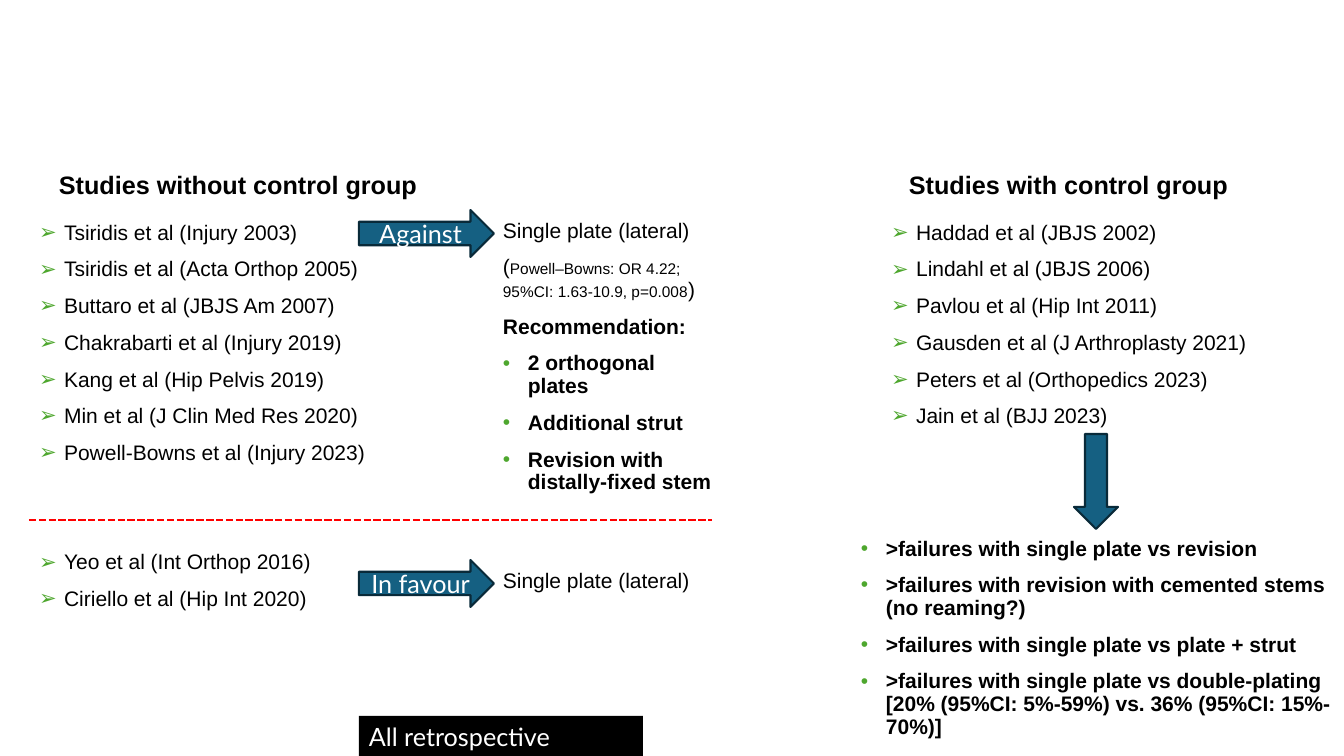
from lxml import etree
from pptx import Presentation
from pptx import util as u
from pptx.dml.color import RGBColor
from pptx.enum import dml, shapes, text
from pptx.oxml import ns

PX = 914400 / 100.8
INDENT = 25
BLACK, WHITE, RED, GREEN = "000000", "FFFFFF", "FF0000", "4EA72E"
BLUE, NAVY = "156082", "092A39"
ARROW, DOT = "➢", "•"
RIGHT, DOWN = shapes.MSO_SHAPE.RIGHT_ARROW, shapes.MSO_SHAPE.DOWN_ARROW


def px(*lengths):
    return [u.Emu(round(n * PX)) for n in lengths]


def color(value):
    return RGBColor.from_string(value)


def add_run(p, words, size=15, bold=False, font="Arial", ink=BLACK):
    r = p.add_run()
    r.text = words
    r.font.size = u.Pt(size)
    r.font.bold = bold
    r.font.name = font
    r.font.color.rgb = color(ink)


def add_bullet(p, char):
    pPr = p._p.get_or_add_pPr()
    pPr.set("marL", str(px(INDENT)[0]))
    pPr.set("indent", str(px(-INDENT)[0]))
    clr = etree.SubElement(pPr, ns.qn("a:buClr"))
    etree.SubElement(clr, ns.qn("a:srgbClr"), val=GREEN)
    etree.SubElement(pPr, ns.qn("a:buFont"), typeface="Arial")
    etree.SubElement(pPr, ns.qn("a:buChar"), char=char)


def next_paragraph(tf, before=10):
    """Return the unused first paragraph, or a new one spaced from the last."""
    p = tf.paragraphs[0]
    first = not p.runs
    if not first:
        p = tf.add_paragraph()
    p.line_spacing = 0.9
    p.space_before = u.Pt(0 if first else before)
    return p


def add_items(tf, items, char, bold=False, before=10):
    """Add bulleted items; `before` is the space above the first of them."""
    for i, item in enumerate(items):
        p = next_paragraph(tf, 10 if i else before)
        add_bullet(p, char)
        add_run(p, item, bold=bold)


def add_text_box(s, x, y, w, h, wrap=True):
    tf = s.shapes.add_textbox(*px(x, y, w, h)).text_frame
    tf.word_wrap = wrap
    return tf


def add_heading(s, x, y, w, words):
    tf = add_text_box(s, x, y, w, 40, wrap=False)
    tf.auto_size = text.MSO_AUTO_SIZE.SHAPE_TO_FIT_TEXT
    add_run(tf.paragraphs[0], words, 18, True)


def place_list(holder, x, y, w, h, items):
    holder.left, holder.top, holder.width, holder.height = px(x, y, w, h)
    tf = holder.text_frame
    tf.auto_size = text.MSO_AUTO_SIZE.NONE
    add_items(tf, items, ARROW)
    return tf


def add_arrow(s, kind, x, y, w, h, words=None):
    sp = s.shapes.add_shape(kind, *px(x, y, w, h))
    sp.shadow.inherit = False
    sp.fill.solid()
    sp.fill.fore_color.rgb = color(BLUE)
    sp.line.color.rgb = color(NAVY)
    sp.line.width = u.Pt(1.5)
    if words:
        tf = sp.text_frame
        tf.vertical_anchor = text.MSO_ANCHOR.MIDDLE
        p = tf.paragraphs[0]
        p.alignment = text.PP_ALIGN.CENTER
        add_run(p, words, 18, font="Lato", ink=WHITE)


def add_divider(s, x, y, w):
    line = s.shapes.add_connector(shapes.MSO_CONNECTOR.STRAIGHT, *px(x, y, x + w, y))
    line.line.color.rgb = color(RED)
    line.line.width = u.Pt(1.75)
    line.line.dash_style = dml.MSO_LINE.SQUARE_DOT
    etree.SubElement(line._element.spPr, ns.qn("a:effectLst"))


def add_verdict(s, x, y, w, h, label):
    """Draw a labelled arrow pointing at the single-plate text it judges."""
    add_arrow(s, RIGHT, x, y, 135, 47, label)
    tf = add_text_box(s, x + 134, y + 5, w - 134, h)
    add_run(next_paragraph(tf), "Single plate (lateral)")
    return tf


def without_control(s, holder, x, y):
    add_heading(s, x + 20, y, 382, "Studies without control group")
    tf = place_list(holder, x, y + 53, 541, 375, [
        "Tsiridis et al (Injury 2003)",
        "Tsiridis et al (Acta Orthop 2005)",
        "Buttaro et al (JBJS Am 2007)",
        "Chakrabarti et al (Injury 2019)",
        "Kang et al (Hip Pelvis 2019)",
        "Min et al (J Clin Med Res 2020)",
        "Powell-Bowns et al (Injury 2023)",
    ])
    add_items(tf, ["Yeo et al (Int Orthop 2016)", "Ciriello et al (Hip Int 2020)"],
              ARROW, before=62)
    add_divider(s, x, y + 356, 683)

    tf = add_verdict(s, x + 330, y + 46, 372, 290, "Against")
    p = next_paragraph(tf)
    add_run(p, "(")
    add_run(p, "Powell–Bowns: OR 4.22; 95%CI: 1.63-10.9, p=0.008", 11)
    add_run(p, ")")
    add_run(next_paragraph(tf), "Recommendation:", bold=True)
    add_items(tf, ["2 orthogonal plates", "Additional strut",
                   "Revision with distally-fixed stem"], DOT, bold=True)
    add_verdict(s, x + 330, y + 396, 353, 38, "In favour")


def with_control(s, holder, x, y):
    add_heading(s, x + 48, y, 343, "Studies with control group")
    place_list(holder, x + 30, y + 53, 433, 220, [
        "Haddad et al (JBJS 2002)",
        "Lindahl et al (JBJS 2006)",
        "Pavlou et al (Hip Int 2011)",
        "Gausden et al (J Arthroplasty 2021)",
        "Peters et al (Orthopedics 2023)",
        "Jain et al (BJJ 2023)",
    ])
    add_arrow(s, DOWN, x + 223, y + 270, 44, 95)
    add_items(add_text_box(s, x, y + 369, 493, 217), [
        ">failures with single plate vs revision",
        ">failures with revision with cemented stems (no reaming?)",
        ">failures with single plate vs plate + strut",
        ">failures with single plate vs double-plating "
        "[20% (95%CI: 5%-59%) vs. 36% (95%CI: 15%-70%)]",
    ], DOT, bold=True)


def add_caption(s, x, y, w, h, words):
    sp = s.shapes.add_textbox(*px(x, y, w, h))
    sp.fill.solid()
    sp.fill.fore_color.rgb = color(BLACK)
    tf = sp.text_frame
    tf.word_wrap = True
    tf.auto_size = text.MSO_AUTO_SIZE.NONE
    add_run(tf.paragraphs[0], words, 18, font="Lato", ink=WHITE)


def main():
    prs = Presentation()
    prs.slide_width, prs.slide_height = px(1344, 756)
    s = prs.slides.add_slide(prs.slide_layouts.get_by_name("Two Content"))
    title, left, right = s.placeholders
    title._element.getparent().remove(title._element)
    without_control(s, left, 29, 164)
    with_control(s, right, 851, 164)
    add_caption(s, 359, 716, 284, 40, "All retrospective")
    prs.save("out.pptx")


if __name__ == "__main__":
    main()
